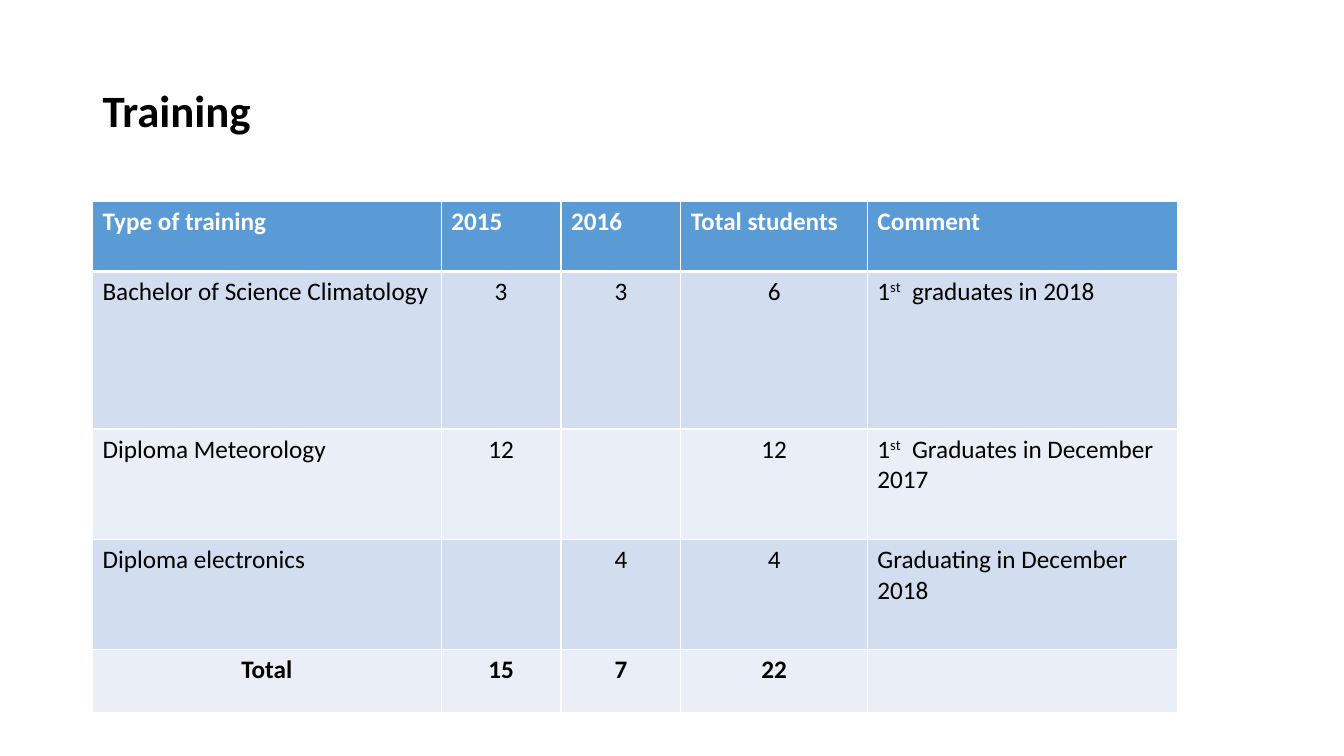
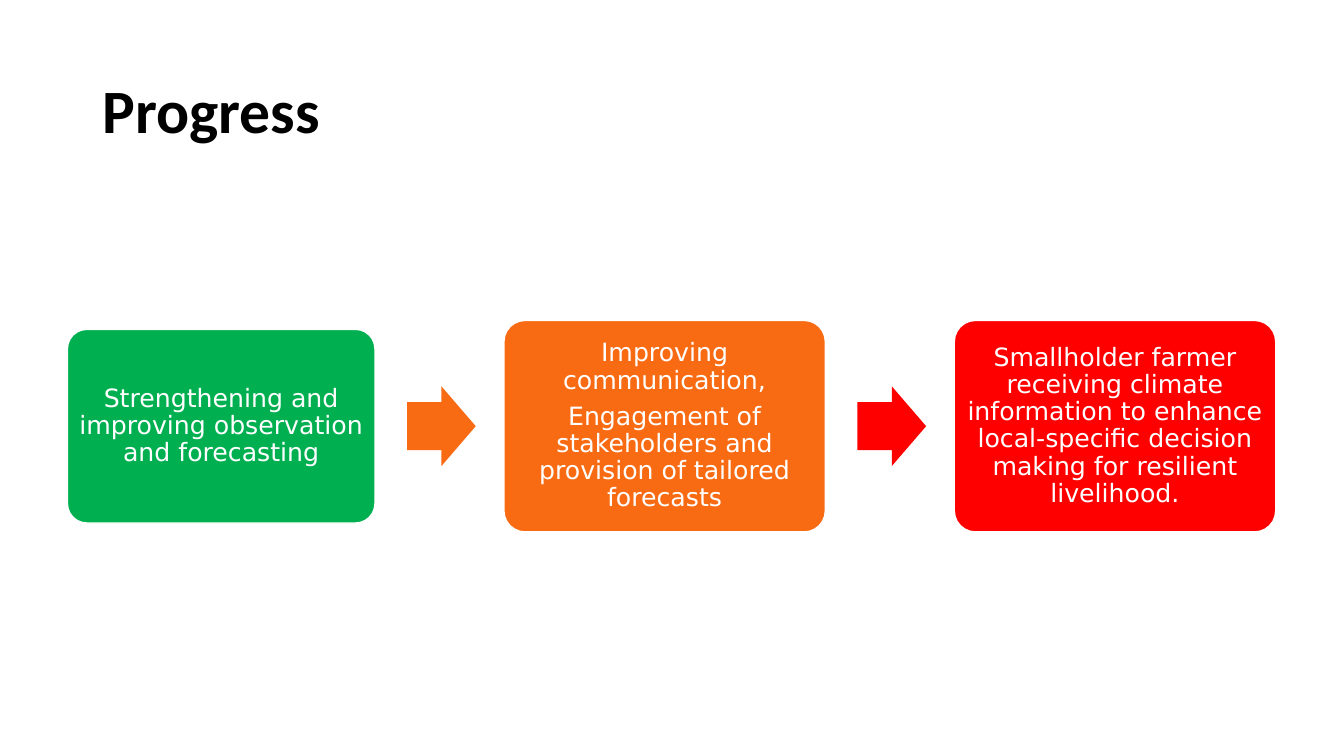
from dataclasses import dataclass

import pptx
import pptx.dml.color
import pptx.enum.shapes
import pptx.enum.text
import pptx.presentation
import pptx.shapes.autoshape
import pptx.slide
import pptx.table
import pptx.text.text
import pptx.util
from lxml import etree
from pptx.dml.color import RGBColor
from pptx.enum.shapes import MSO_SHAPE
from pptx.enum.text import MSO_ANCHOR, MSO_AUTO_SIZE, PP_ALIGN
from pptx.oxml.ns import qn
from pptx.util import Cm, Pt


@dataclass(frozen=True)
class Theme:
    font: str = "Calibri"
    card_font: str = "DejaVu Sans"
    text: str = "000000"
    white: str = "FFFFFF"
    header: str = "5B9BD5"
    bands: tuple[str, str] = ("D2DEEF", "EAEFF7")
    green: str = "00B050"
    orange: str = "F96B13"
    red: str = "FF0000"
    body_size: int = 18
    thin: int = 1
    thick: int = 3


@dataclass(frozen=True)
class Course:
    """One table row; a comment is a list of (text, is superscript) parts."""
    name: str
    counts: tuple[str, str, str]
    comment: tuple[tuple[str, bool], ...] = ()


@dataclass(frozen=True)
class Step:
    paragraphs: tuple[str, ...]
    color: str
    width: float
    height: float


THEME = Theme()

HEADINGS = ("Type of training", "2015", "2016", "Total students", "Comment")
COURSES = (
    Course("Bachelor of Science Climatology", ("3", "3", "6"),
           (("1", False), ("st", True), ("  graduates in 2018", False))),
    Course("Diploma Meteorology", ("12", "", "12"),
           (("1", False), ("st", True), ("  Graduates in December 2017", False))),
    Course("Diploma electronics", ("", "4", "4"),
           (("Graduating in December 2018", False),)),
    Course("Total", ("15", "7", "22")),
)
COL_WIDTHS = (8.79, 3.02, 3.02, 4.7, 7.82)
ROW_HEIGHTS = (1.76, 3.97, 2.78, 2.78, 1.6)

STEPS = (
    Step(("Strengthening and improving observation and forecasting",),
         THEME.green, 7.75, 4.88),
    Step(("Improving communication,",
          "Engagement of stakeholders and provision of tailored forecasts"),
         THEME.orange, 8.1, 5.33),
    Step(("Smallholder farmer receiving climate information to enhance "
          "local-specific decision making for resilient livelihood.",),
         THEME.red, 8.1, 5.33),
)
FLOW_LEFT, FLOW_MIDDLE = 1.7, 10.74
ARROW_WIDTH, ARROW_HEIGHT = 1.73, 2.01
GAP_BEFORE_ARROW, GAP_AFTER_ARROW = 0.81, 0.71


def style(p: pptx.text.text._Paragraph, size: float, color: str,
          bold: bool = False, font: str = THEME.font) -> None:
    p.font.name = font
    p.font.size = Pt(size)
    p.font.bold = bold
    p.font.color.rgb = RGBColor.from_string(color)


def add_slide(prs: pptx.presentation.Presentation, title: str,
              size: float) -> pptx.slide.Slide:
    s = prs.slides.add_slide(prs.slide_layouts.get_by_name("Title Only"))
    sp = s.shapes.title
    sp.left, sp.top, sp.width, sp.height = Cm(2.33), Cm(1.01), Cm(29.21), Cm(3.68)
    tf = sp.text_frame
    tf.text = title
    tf.auto_size = MSO_AUTO_SIZE.NONE
    tf.vertical_anchor = MSO_ANCHOR.MIDDLE
    p = tf.paragraphs[0]
    p.alignment = PP_ALIGN.LEFT
    p.line_spacing = 0.9
    style(p, size, THEME.text, bold=True)
    return s


def set_borders(cell: pptx.table._Cell, top: int, bottom: int) -> None:
    """Draw white borders, given the top and bottom widths in points."""
    tc_pr = cell._tc.get_or_add_tcPr()
    sides = (("a:lnL", THEME.thin), ("a:lnR", THEME.thin),
             ("a:lnT", top), ("a:lnB", bottom))
    for i, (tag, width) in enumerate(sides):
        ln = etree.Element(qn(tag), w=str(Pt(width)))
        fill = etree.SubElement(ln, qn("a:solidFill"))
        etree.SubElement(fill, qn("a:srgbClr"), val=THEME.white)
        tc_pr.insert(i, ln)


def fill_cell(cell: pptx.table._Cell, parts: tuple[tuple[str, bool], ...],
              fill: str, color: str, bold: bool, centered: bool) -> None:
    cell.fill.solid()
    cell.fill.fore_color.rgb = RGBColor.from_string(fill)
    p = cell.text_frame.paragraphs[0]
    p.alignment = PP_ALIGN.CENTER if centered else PP_ALIGN.LEFT
    style(p, THEME.body_size, color, bold)
    for text, superscript in parts:
        r = p.add_run()
        r.text = text
        if superscript:
            r._r.get_or_add_rPr().set("baseline", "30000")


def add_training_table(s: pptx.slide.Slide) -> None:
    table = s.shapes.add_table(
        len(ROW_HEIGHTS), len(COL_WIDTHS), Cm(2.33), Cm(5.08),
        Cm(sum(COL_WIDTHS)), Cm(sum(ROW_HEIGHTS))).table
    table.horz_banding = False
    for column, width in zip(table.columns, COL_WIDTHS):
        column.width = Cm(width)
    for row, height in zip(table.rows, ROW_HEIGHTS):
        row.height = Cm(height)

    for j, heading in enumerate(HEADINGS):
        cell = table.cell(0, j)
        fill_cell(cell, ((heading, False),), THEME.header, THEME.white, True, False)
        set_borders(cell, THEME.thin, THEME.thick)

    for i, course in enumerate(COURSES, start=1):
        is_total = course is COURSES[-1]
        texts = (course.name, *course.counts)
        row_parts = [((t, False),) if t else () for t in texts] + [course.comment]
        for j, parts in enumerate(row_parts):
            cell = table.cell(i, j)
            centered = 1 <= j <= len(course.counts) or is_total
            fill_cell(cell, parts, THEME.bands[(i - 1) % 2], THEME.text,
                      is_total, centered)
            set_borders(cell, THEME.thick if i == 1 else THEME.thin, THEME.thin)


def add_flow_shape(s: pptx.slide.Slide, kind: MSO_SHAPE, left: float, width: float,
                   height: float, color: str) -> pptx.shapes.autoshape.Shape:
    """Add a filled shape centred on the flow's middle line."""
    sp = s.shapes.add_shape(kind, Cm(left), Cm(FLOW_MIDDLE - height / 2),
                            Cm(width), Cm(height))
    sp.shadow.inherit = False
    sp.fill.solid()
    sp.fill.fore_color.rgb = RGBColor.from_string(color)
    sp.line.fill.background()
    return sp


def add_card(s: pptx.slide.Slide, step: Step, left: float) -> None:
    sp = add_flow_shape(s, MSO_SHAPE.ROUNDED_RECTANGLE, left, step.width,
                        step.height, step.color)
    sp.adjustments[0] = 0.1
    sp.line.color.rgb = RGBColor.from_string(THEME.white)
    sp.line.width = Pt(THEME.thin)
    tf = sp.text_frame
    tf.word_wrap = True
    tf.vertical_anchor = MSO_ANCHOR.MIDDLE
    tf.margin_left = tf.margin_right = tf.margin_top = tf.margin_bottom = Cm(0.1)
    tf.text = "\n".join(step.paragraphs)
    for p in tf.paragraphs:
        p.alignment = PP_ALIGN.CENTER
        p.line_spacing = 0.9
        p.space_after = Pt(6.3)
        style(p, THEME.body_size, THEME.white, font=THEME.card_font)


def add_progress_flow(s: pptx.slide.Slide) -> None:
    left = FLOW_LEFT
    for i, step in enumerate(STEPS):
        if i > 0:
            left += GAP_BEFORE_ARROW
            arrow = add_flow_shape(s, MSO_SHAPE.RIGHT_ARROW, left, ARROW_WIDTH,
                                   ARROW_HEIGHT, step.color)
            arrow.adjustments[0] = 0.6
            arrow.adjustments[1] = 0.5
            left += ARROW_WIDTH + GAP_AFTER_ARROW
        add_card(s, step, left)
        left += step.width


def main() -> None:
    prs = pptx.Presentation()
    prs.slide_width, prs.slide_height = Cm(33.87), Cm(19.05)
    add_training_table(add_slide(prs, "Training", 32))
    add_progress_flow(add_slide(prs, "Progress", 44))
    prs.save("out.pptx")


if __name__ == "__main__":
    main()
